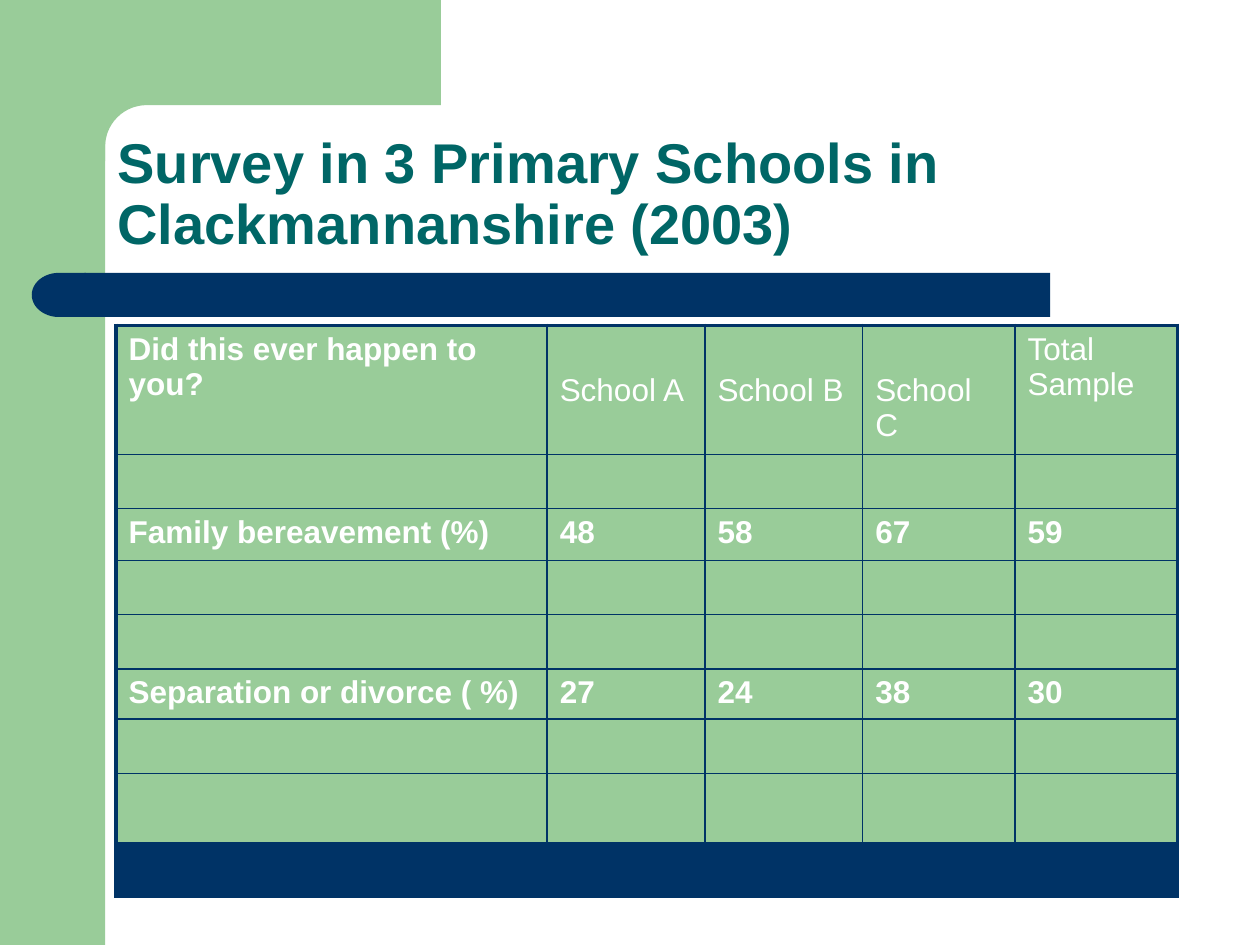
from math import cos, pi, sin

from lxml.etree import SubElement
from pptx import Presentation
from pptx.dml.color import RGBColor
from pptx.enum.shapes import MSO_SHAPE as Shape
from pptx.enum.text import MSO_ANCHOR as Anchor
from pptx.oxml.ns import qn
from pptx.util import Cm, Pt

GREEN = RGBColor(0x99, 0xCC, 0x99)
NAVY = RGBColor(0x00, 0x33, 0x66)
TEAL = RGBColor(0x00, 0x66, 0x66)
WHITE = RGBColor(0xFF, 0xFF, 0xFF)
FONT = "Arial"

BAND = 2.12
COLUMN_WIDTHS = [8.69, 3.18, 3.18, 3.07, 3.28]
ROW_HEIGHTS = [2.51, 1.09, 1.05, 1.09, 1.09, 0.96, 1.09, 1.4, 1.09]
HEADER = ["Did this ever happen to you?", "School A", "School B", "School C", "Total Sample"]
SURVEY_ROWS = {
    0: HEADER,
    2: ["Family bereavement (%)", "48", "58", "67", "59"],
    5: ["Separation or divorce ( %)", "27", "24", "38", "30"],
}


def paint(shape, color):
    shape.shadow.inherit = False
    shape.fill.solid()
    shape.fill.fore_color.rgb = color
    shape.line.fill.background()


def add_block(page, kind, left, top, width, height, color):
    block = page.shapes.add_shape(kind, Cm(left), Cm(top), Cm(width), Cm(height))
    paint(block, color)
    return block


def add_corner(page, left, right, bottom, radius, steps=16):
    center = BAND + radius
    angles = [pi / 2 * step / steps for step in range(steps + 1)]
    arc = [(center - radius * sin(angle), center - radius * cos(angle)) for angle in angles]
    outline = [(right, 0), (right, BAND), *arc, (BAND, bottom), (left, bottom), (left, 0)]
    points = [(Cm(x), Cm(y)) for x, y in outline]
    builder = page.shapes.build_freeform(*points[0])
    builder.add_line_segments(points[1:], close=True)
    paint(builder.convert_to_shape(), GREEN)


def style_paragraph(para, size, color, bold):
    para.font.name = FONT
    para.font.size = Pt(size)
    para.font.bold = bold
    para.font.color.rgb = color


def add_title(page, text):
    box = page.shapes.add_textbox(Cm(BAND), Cm(BAND), Cm(22), Cm(3.17))
    frame = box.text_frame
    frame.word_wrap = True
    frame.vertical_anchor = Anchor.BOTTOM
    para = frame.paragraphs[0]
    para.text = text
    para.line_spacing = 0.9
    style_paragraph(para, 32, TEAL, True)


def set_borders(cell, widths):
    properties = cell._tc.get_or_add_tcPr()
    for position, (side, width) in enumerate(widths.items()):
        line = properties.makeelement(qn(f"a:{side}"), {"w": str(Pt(width))})
        fill = SubElement(line, qn("a:solidFill"))
        SubElement(fill, qn("a:srgbClr"), val=str(NAVY))
        properties.insert(position, line)


def add_survey_table(page):
    last_row, last_column = len(ROW_HEIGHTS) - 1, len(COLUMN_WIDTHS) - 1
    frame = page.shapes.add_table(
        last_row + 1, last_column + 1, Cm(2.34), Cm(6.56),
        Cm(sum(COLUMN_WIDTHS)), Cm(sum(ROW_HEIGHTS)))
    table = frame.table
    for column, width in zip(table.columns, COLUMN_WIDTHS):
        column.width = Cm(width)
    for row_index, height in enumerate(ROW_HEIGHTS):
        table.rows[row_index].height = Cm(height)
        texts = SURVEY_ROWS.get(row_index, [""] * len(COLUMN_WIDTHS))
        for column_index, text in enumerate(texts):
            cell = table.cell(row_index, column_index)
            cell.fill.solid()
            cell.fill.fore_color.rgb = NAVY if row_index == last_row else GREEN
            set_borders(cell, {
                "lnL": 2.25 if column_index == 0 else 1,
                "lnR": 2.25 if column_index == last_column else 1,
                "lnT": 2.25 if row_index == 0 else 1,
                "lnB": 2.25 if row_index == last_row else 1,
            })
            if text.startswith("School"):
                cell.margin_top = Cm(0.95)
            para = cell.text_frame.paragraphs[0]
            para.text = text
            style_paragraph(para, 18, WHITE, row_index > 0 or column_index == 0)


def main():
    deck = Presentation()
    deck.slide_width, deck.slide_height = Cm(25.4), Cm(19.05)
    page = deck.slides.add_slide(deck.slide_layouts[6])
    add_block(page, Shape.RECTANGLE, 0, 0, BAND, 19.05, GREEN)
    add_corner(page, left=1.27, right=8.89, bottom=3.25, radius=0.84)
    add_block(page, Shape.RECTANGLE, 1.7, 5.5, 19.47, 0.89, NAVY)
    bar_end = add_block(page, Shape.FLOWCHART_DELAY, 0.64, 5.5, 1.09, 0.89, NAVY)
    bar_end.rotation = 180
    add_title(page, "Survey in 3 Primary Schools in Clackmannanshire (2003)")
    add_survey_table(page)
    deck.save("out.pptx")


if __name__ == "__main__":
    main()
